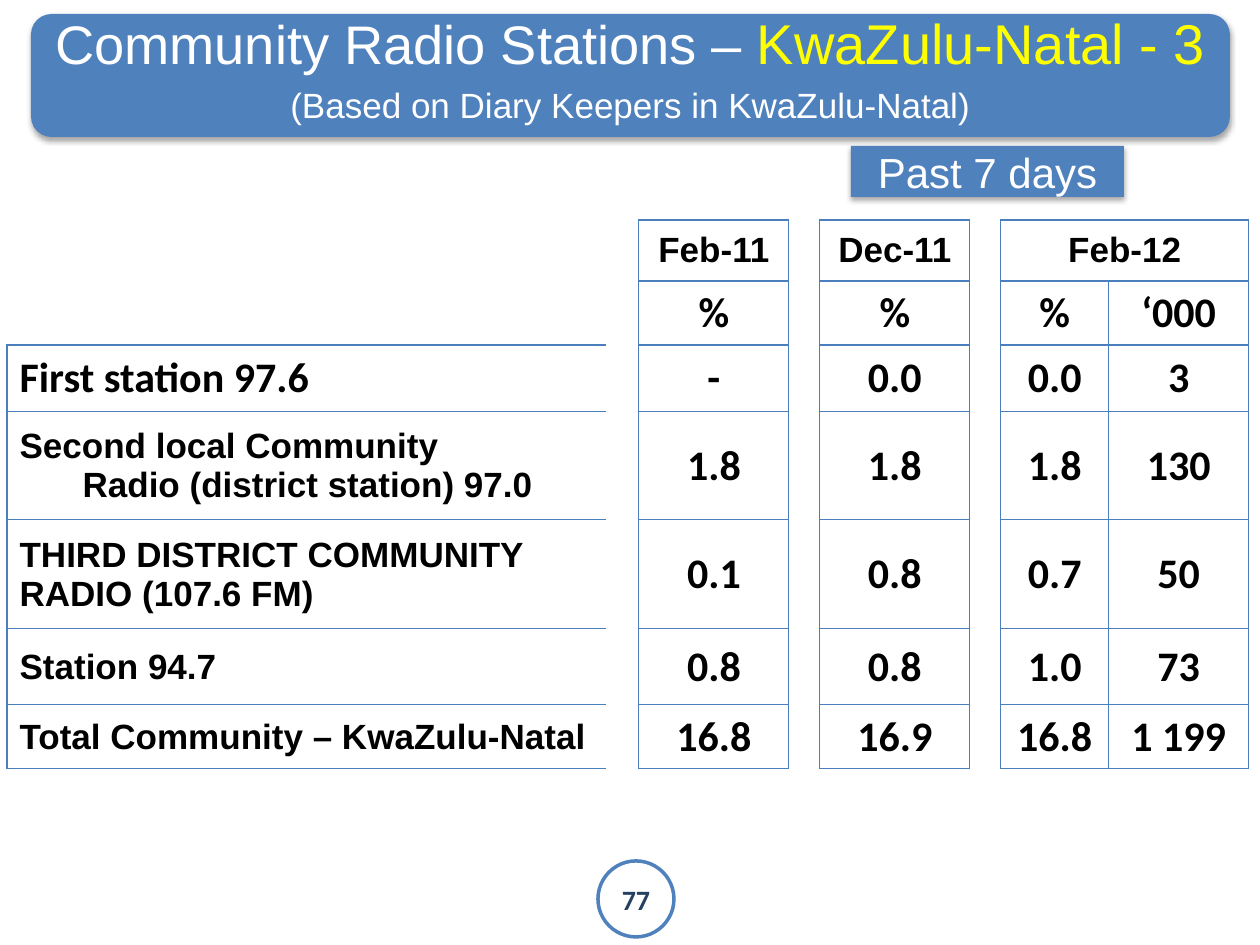
"""Build the KwaZulu-Natal community radio audience slide."""
from lxml.etree import SubElement
from pptx import Presentation
from pptx.dml.color import RGBColor
from pptx.enum.shapes import MSO_SHAPE
from pptx.enum.text import MSO_ANCHOR, PP_ALIGN
from pptx.oxml.ns import qn
from pptx.util import Emu, Pt

PX = 914400 // 126
COLORS = {
    "blue": "4F81BD", "border": "4B7EBC", "white": "FFFFFF",
    "yellow": "FFFF00", "black": "000000", "navy": "254061",
}
TITLE = [
    [("Community Radio Stations – ", 31, "white"), ("KwaZulu-Natal - 3", 32, "yellow")],
    [("(Based on Diary Keepers in KwaZulu-Natal)", 20, "white")],
]
HEADERS = [
    ("", "Feb-11", "Dec-11", "Feb-12", ""),
    ("", "%", "%", "%", "‘000"),
]
STATIONS = [
    ("First station 97.6", "-", "0.0", "0.0", "3"),
    ("Second local Community\v\tRadio (district station) 97.0", "1.8", "1.8", "1.8", "130"),
    ("THIRD DISTRICT COMMUNITY\vRADIO (107.6 FM)", "0.1", "0.8", "0.7", "50"),
    ("Station 94.7", "0.8", "0.8", "1.0", "73"),
    ("Total Community – KwaZulu-Natal", "16.8", "16.9", "16.8", "1 199"),
]
ROWS = HEADERS + STATIONS
COLUMN_WIDTHS = [599, 33, 150, 31, 150, 31, 108, 140]
ROW_HEIGHTS = [61, 64, 67, 108, 109, 76, 63]
TEXT_COLUMNS = [0, 2, 4, 6, 7]
GAP_EDGES = {1: "R", 3: "LR", 5: "LR"}
TABLE_LEFT, TABLE_TOP = 7, 220
NO_STYLE = "{2D5ABB26-0587-4C30-8999-92F81FD0307C}"


def px(count):
    return Emu(count * PX)


def color(name):
    return RGBColor.from_string(COLORS[name])


def set_font(font, size, name, tone, bold=False):
    font.size, font.name, font.bold = Pt(size), name, bold
    font.color.rgb = color(tone)


def add_box(page, kind, bounds, fill, line=None):
    box = page.shapes.add_shape(kind, *map(px, bounds))
    box.shadow.inherit = False
    box.fill.solid()
    box.fill.fore_color.rgb = color(fill)
    if line:
        box.line.color.rgb = color(line)
        box.line.width = Pt(2)
    else:
        box.line.fill.background()
    box.text_frame.vertical_anchor = MSO_ANCHOR.MIDDLE
    return box


def add_shadow(box):
    effects = box._element.spPr.find(qn("a:effectLst"))
    shadow = SubElement(effects, qn("a:outerShdw"), blurRad=str(Pt(3.1)),
                        dist=str(Pt(1.8)), dir="5400000", rotWithShape="0")
    tone = SubElement(shadow, qn("a:srgbClr"), val=COLORS["black"])
    SubElement(tone, qn("a:alpha"), val="35000")


def write_label(box, text, size, name, tone, bold=False):
    frame = box.text_frame
    frame.margin_left = frame.margin_right = frame.margin_top = frame.margin_bottom = 0
    para = frame.paragraphs[0]
    para.text, para.alignment = text, PP_ALIGN.CENTER
    set_font(para.font, size, name, tone, bold)


def set_borders(cell, edges):
    properties = cell._tc.get_or_add_tcPr()
    for edge in "LRTB":
        line = SubElement(properties, qn(f"a:ln{edge}"), w=str(Pt(0.75)))
        if edge in edges:
            fill = SubElement(line, qn("a:solidFill"))
            SubElement(fill, qn("a:srgbClr"), val=COLORS["border"])
        else:
            SubElement(line, qn("a:noFill"))


def cell_edges(row, column):
    if column in GAP_EDGES:
        return GAP_EDGES[column]
    if column == 0:
        return "B" if row < len(HEADERS) else "LTB"
    return "LRTB"


def add_title(page):
    box = add_box(page, MSO_SHAPE.ROUNDED_RECTANGLE, (31, 14, 1199, 123), "blue")
    add_shadow(box)
    frame = box.text_frame
    frame.word_wrap = False
    for index, spans in enumerate(TITLE):
        para = frame.add_paragraph() if index else frame.paragraphs[0]
        para.alignment, para.line_spacing = PP_ALIGN.CENTER, 0.7
        para.space_before = Pt(12 * index)
        for text, size, tone in spans:
            span = para.add_run()
            span.text = text
            set_font(span.font, size, "Arial", tone)


def add_audience_table(page):
    frame = page.shapes.add_table(
        len(ROWS), len(COLUMN_WIDTHS), px(TABLE_LEFT), px(TABLE_TOP),
        px(sum(COLUMN_WIDTHS)), px(sum(ROW_HEIGHTS)))
    table = frame.table
    table.first_row = table.horz_banding = False
    table._tbl.tblPr.find(qn("a:tableStyleId")).text = NO_STYLE
    for column, width in zip(table.columns, COLUMN_WIDTHS):
        column.width = px(width)
    for row, height in zip(table.rows, ROW_HEIGHTS):
        row.height = px(height)
    for row, values in enumerate(ROWS):
        texts = dict(zip(TEXT_COLUMNS, values))
        for column in range(len(COLUMN_WIDTHS)):
            cell = table.cell(row, column)
            set_borders(cell, cell_edges(row, column))
            cell.fill.solid()
            cell.fill.fore_color.rgb = color("white")
            if not texts.get(column):
                continue
            cell.vertical_anchor = MSO_ANCHOR.MIDDLE
            cell.text_frame.text = texts[column]
            para = cell.text_frame.paragraphs[0]
            para.alignment = PP_ALIGN.CENTER if column else PP_ALIGN.LEFT
            small = row == 0 or (column == 0 and row > len(HEADERS))
            size, name = (20, "Arial") if small else (24, "Calibri")
            set_font(para.font, size, name, "black", True)
    last = len(ROWS) - 1
    table.cell(0, 0).merge(table.cell(1, 0))
    table.cell(0, 6).merge(table.cell(0, 7))
    for column in GAP_EDGES:
        table.cell(0, column).merge(table.cell(last, column))


def main():
    deck = Presentation()
    deck.slide_width, deck.slide_height = px(1260), px(945)
    page = deck.slides.add_slide(deck.slide_layouts[6])
    number = add_box(page, MSO_SHAPE.OVAL, (598, 861, 76, 76), "white", "blue")
    write_label(number, "77", 16, "Calibri", "navy", True)
    add_audience_table(page)
    add_title(page)
    period = add_box(page, MSO_SHAPE.RECTANGLE, (851, 146, 273, 51), "blue")
    add_shadow(period)
    write_label(period, "Past 7 days", 24, "Arial", "white")
    deck.save("out.pptx")


if __name__ == "__main__":
    main()
